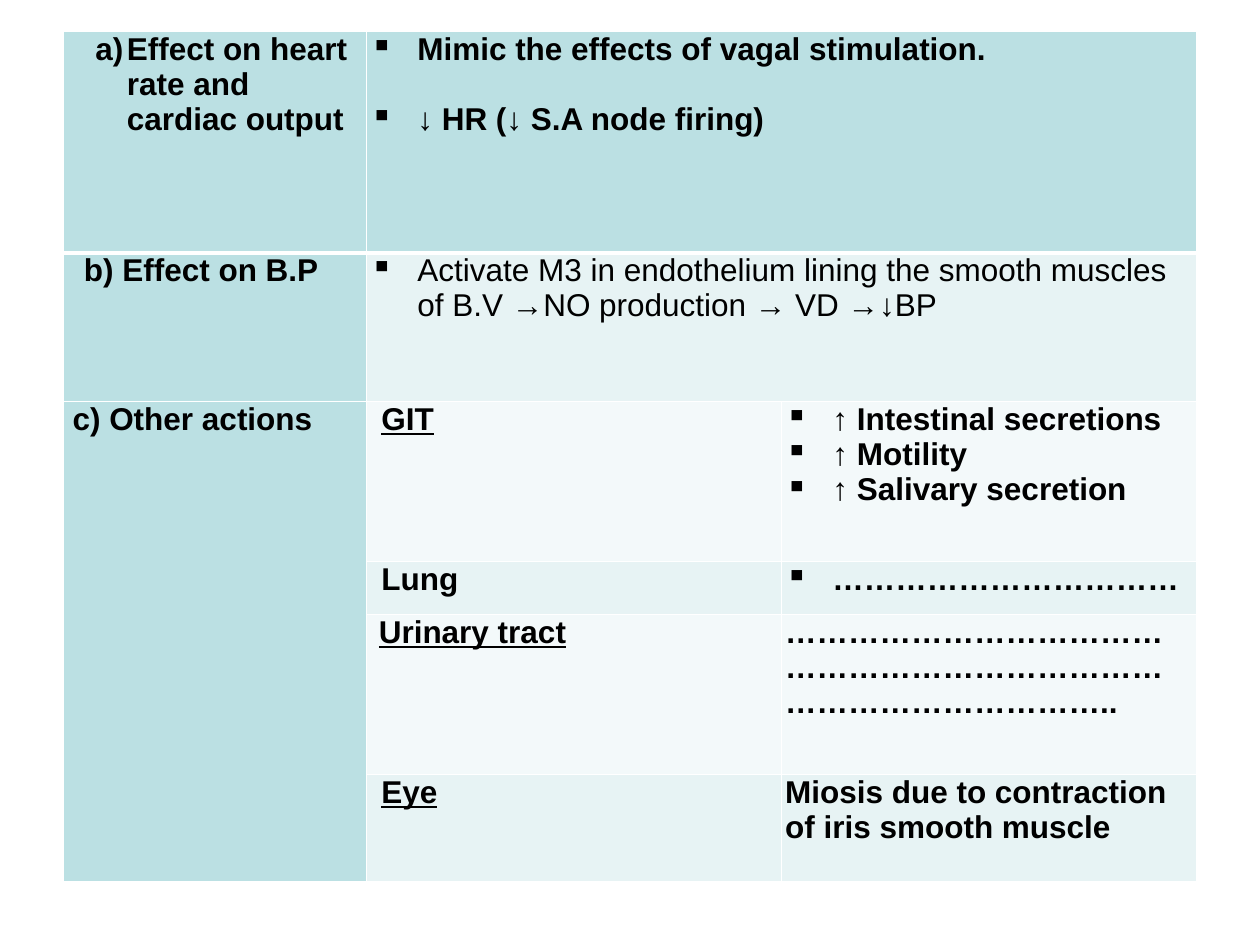
from lxml import etree
from pptx import Presentation
from pptx.dml.color import RGBColor
from pptx.oxml.ns import qn
from pptx.util import Pt

BLACK = RGBColor(0x00, 0x00, 0x00)
WHITE = RGBColor(0xFF, 0xFF, 0xFF)
TEAL = RGBColor(0xBB, 0xE0, 0xE3)
PALE = RGBColor(0xE7, 0xF3, 0xF4)
MIST = RGBColor(0xF3, 0xF9, 0xFA)

COLS = [173.5, 237.25, 237.25]
ROWS = [126.5, 85, 91.5, 30.25, 91.5, 61.25]


class Deck:
    """Holds the text style and the current slide."""
    font, size = "Arial", Pt(18)

    def __init__(self):
        self.prs = Presentation()
        self.prs.slide_width, self.prs.slide_height = Pt(720), Pt(540)
        self.slide = self.prs.slides.add_slide(self.prs.slide_layouts[6])

    def table(self, left, top, cols, rows):
        frame = self.slide.shapes.add_table(
            len(rows), len(cols), Pt(left), Pt(top), Pt(sum(cols)), Pt(sum(rows)))
        grid = frame.table
        grid.first_row = grid.horz_banding = False
        for col, width in zip(grid.columns, cols):
            col.width = Pt(width)
        for row, height in zip(grid.rows, rows):
            row.height = Pt(height)
        return grid

    def edge(self, cell, side, width):
        line = etree.SubElement(cell._tc.get_or_add_tcPr(), qn("a:ln" + side),
                                w=str(Pt(width)))
        fill = etree.SubElement(line, qn("a:solidFill"))
        etree.SubElement(fill, qn("a:srgbClr"), val=str(WHITE))

    def paint(self, cell, color, top=1, bottom=1):
        for side, width in zip("LRTB", (1, 1, top, bottom)):
            self.edge(cell, side, width)
        cell.fill.solid()
        cell.fill.fore_color.rgb = color
        cell.margin_left = cell.margin_right = Pt(2)
        cell.margin_top = cell.margin_bottom = 0

    def label(self, cell, words, left=0, hang=0, mark=None, gap=0,
              bold=True, under=False):
        """Fill a cell; mark is a bullet tag with its attributes."""
        cell.text_frame.text = words
        for num, para in enumerate(cell.text_frame.paragraphs):
            props = para._p.get_or_add_pPr()
            props.set("marL", str(Pt(left)))
            props.set("indent", str(Pt(-hang)))
            if mark:
                tag, attrs = mark
                etree.SubElement(props, qn(tag), attrs)
            if num and gap:
                para.space_before = Pt(gap)
            for run in para.runs:
                font = run.font
                font.name, font.size = self.font, self.size
                font.bold, font.underline = bold, under
                font.color.rgb = BLACK

    def bullets(self, cell, words, **style):
        self.label(cell, words, 27, 27, ("a:buChar", {"char": "▪"}), **style)


def main():
    deck = Deck()
    grid = deck.table(36, 18, COLS, ROWS)
    cell = grid.cell

    # Fills and borders, with a thick rule under the first row
    bands = [TEAL, PALE, MIST, PALE, MIST, PALE]
    for row, band in enumerate(bands):
        for col in range(len(COLS)):
            deck.paint(cell(row, col), band if col else TEAL,
                       top=3 if row == 1 else 1, bottom=3 if row == 0 else 1)

    # Merged cells
    for row in (0, 1):
        cell(row, 1).merge(cell(row, 2))
    cell(2, 0).merge(cell(5, 0))

    # Effects
    deck.label(cell(0, 0), "Effect on heart rate and cardiac output", 34.5, 18,
               ("a:buAutoNum", {"type": "alphaLcParenR"}))
    deck.label(cell(1, 0), "b) Effect on B.P", 10)
    deck.label(cell(2, 0), "c) Other actions", 3.5)

    # Heart and blood pressure
    deck.bullets(cell(0, 1), "Mimic the effects of vagal stimulation.\n"
                 "↓ HR (↓ S.A node firing)", gap=20)
    deck.bullets(cell(1, 1), "Activate M3 in endothelium lining the smooth "
                 "muscles of B.V →NO production → VD →↓BP", bold=False)

    # Organs
    organs = [("GIT", 6.5, True), ("Lung", 6.5, False),
              ("Urinary tract", 5, True), ("Eye", 6.5, True)]
    for row, (name, left, under) in enumerate(organs, 2):
        deck.label(cell(row, 1), name, left, under=under)

    # Actions on the organs
    deck.bullets(cell(2, 2), "↑ Intestinal secretions\n↑ Motility\n"
                 "↑ Salivary secretion")
    deck.bullets(cell(3, 2), "…" * 11)
    deck.label(cell(4, 2), "…" * 34 + "..")
    deck.label(cell(5, 2), "Miosis due to contraction of iris smooth muscle")

    deck.prs.save("out.pptx")


if __name__ == "__main__":
    main()
